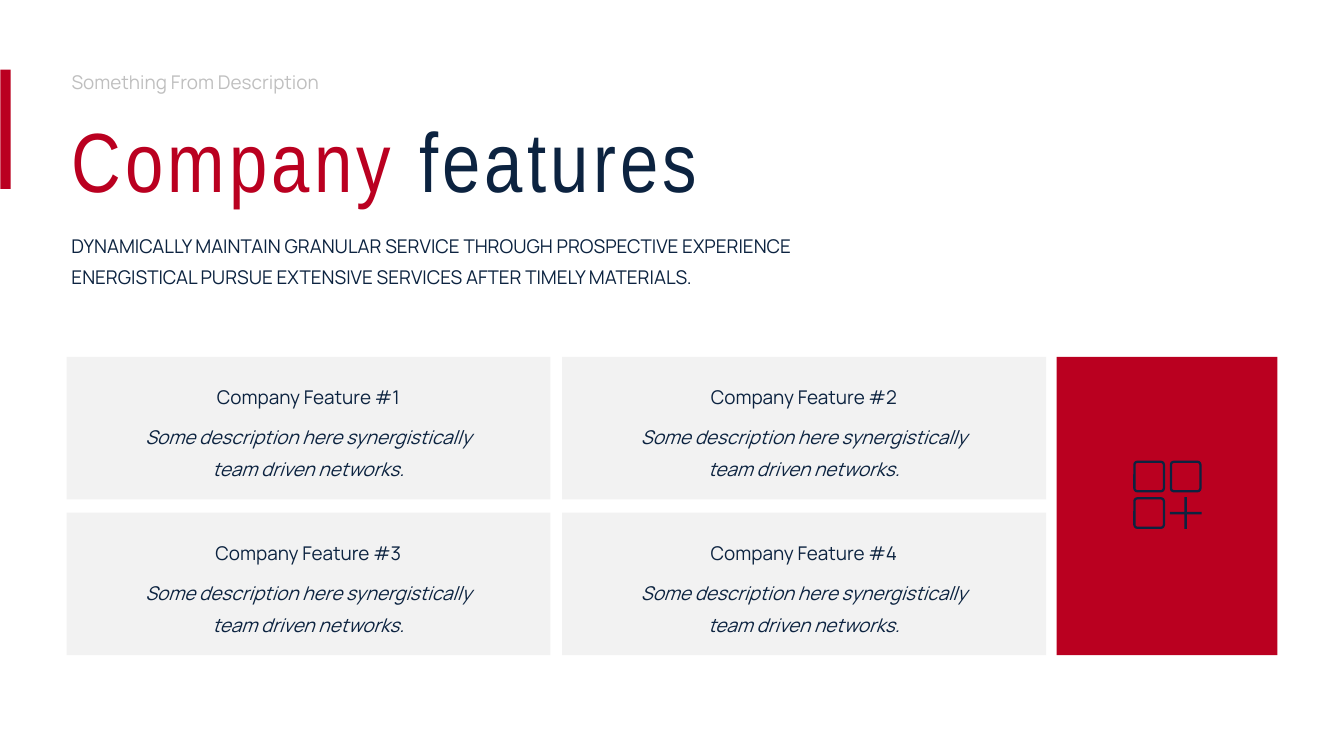
from pptx import Presentation
from pptx import util as u
from pptx.dml.color import RGBColor
from pptx.enum import shapes, text

RED = RGBColor(0xBA, 0x00, 0x20)
NAVY = RGBColor(0x0C, 0x23, 0x40)
GRAY = RGBColor(0xBF, 0xBF, 0xBF)
LIGHT = RGBColor(0xF2, 0xF2, 0xF2)
LEFT, GRID_TOP = 1.32, 7.08
CARD_WIDTH, CARD_HEIGHT = 9.6, 2.83
COLUMN_STEP, ROW_STEP = 9.83, 3.09
ICON_LEFT, ICON_TOP, ICON_STEP = 22.48, 9.14, 0.725
TILE, STROKE = 0.63, 0.045


def write(paragraph, content, size=27, font="Manrope", color=NAVY, italic=None,
          line_spacing=1.4, space_before=0, align=text.PP_ALIGN.LEFT, tracking=None):
    paragraph.alignment = align
    paragraph.line_spacing = line_spacing
    paragraph.space_before = u.Pt(space_before)
    run = paragraph.add_run()
    run.text = content
    run.font.size = u.Pt(size)
    run.font.name = font
    run.font.color.rgb = color
    run.font.italic = italic
    if tracking:
        run.font._element.set("spc", str(tracking * 100))


def add_box(parent, kind, left, top, width, height, fill=None):
    box = (u.Inches(left), u.Inches(top), u.Inches(width), u.Inches(height))
    if kind is None:
        shape = parent.add_textbox(*box)
        shape.text_frame.word_wrap = True
        shape.text_frame.auto_size = text.MSO_AUTO_SIZE.SHAPE_TO_FIT_TEXT
        return shape
    shape = parent.add_shape(kind, *box)
    shape.shadow.inherit = False
    shape.line.fill.background()
    if fill is None:
        shape.fill.background()
    else:
        shape.fill.solid()
        shape.fill.fore_color.rgb = fill
    return shape


presentation = Presentation()
presentation.slide_width = u.Inches(26.66)
presentation.slide_height = u.Inches(15)
slide = presentation.slides.add_slide(presentation.slide_layouts[5])
RECTANGLE = shapes.MSO_SHAPE.RECTANGLE

title = slide.shapes.title
title.left, title.top = u.Inches(LEFT), u.Inches(2.48)
title.width, title.height = u.Inches(14.26), u.Inches(1.82)
title.text_frame.word_wrap = True
title.text_frame.auto_size = text.MSO_AUTO_SIZE.SHAPE_TO_FIT_TEXT
title.text_frame.vertical_anchor = text.MSO_ANCHOR.TOP
for word, color in (("Company ", RED), ("features", NAVY)):
    write(title.text_frame.paragraphs[0], word, size=120, font="Arial Narrow",
          color=color, line_spacing=0.8, tracking=6)

kicker = add_box(slide.shapes, None, LEFT, 1.17, 8.92, 0.71)
write(kicker.text_frame.paragraphs[0], "Something From Description", color=GRAY)
add_box(slide.shapes, RECTANGLE, 0.01, 1.38, 0.2, 2.37, RED)

for index in range(4):
    row, column = divmod(index, 2)
    left = LEFT + column * COLUMN_STEP
    top = GRID_TOP + row * ROW_STEP
    card = slide.shapes.add_group_shape()
    add_box(card.shapes, RECTANGLE, left, top, CARD_WIDTH, CARD_HEIGHT, LIGHT)
    frame = add_box(card.shapes, None, left + 1.15, top + 0.34, 7.29, 2.12).text_frame
    write(frame.paragraphs[0], f"Company Feature #{index + 1}",
          space_before=24, align=text.PP_ALIGN.CENTER)
    write(frame.add_paragraph(),
          "Some description here synergistically team driven networks.",
          italic=True, space_before=12, align=text.PP_ALIGN.CENTER)

add_box(slide.shapes, RECTANGLE, 20.96, GRID_TOP, 4.38, ROW_STEP + CARD_HEIGHT, RED)

icon = slide.shapes.add_group_shape()
for row, column in ((0, 0), (0, 1), (1, 0)):
    tile = add_box(icon.shapes, shapes.MSO_SHAPE.ROUNDED_RECTANGLE,
                   ICON_LEFT + column * ICON_STEP + STROKE / 2,
                   ICON_TOP + row * ICON_STEP + STROKE / 2,
                   TILE - STROKE, TILE - STROKE)
    tile.adjustments[0] = 0.1
    tile.line.color.rgb = NAVY
    tile.line.width = u.Inches(STROKE)
plus = add_box(icon.shapes, shapes.MSO_SHAPE.CROSS, ICON_LEFT + ICON_STEP,
               ICON_TOP + ICON_STEP, TILE, TILE, NAVY)
plus.adjustments[0] = 0.46

summary = add_box(slide.shapes, None, LEFT, 4.42, 15.43, 1.32)
write(summary.text_frame.paragraphs[0],
      "DYNAMICALLY MAINTAIN GRANULAR SERVICE THROUGH PROSPECTIVE EXPERIENCE "
      "ENERGISTICAL PURSUE EXTENSIVE SERVICES AFTER TIMELY MATERIALS.")

presentation.save("out.pptx")
